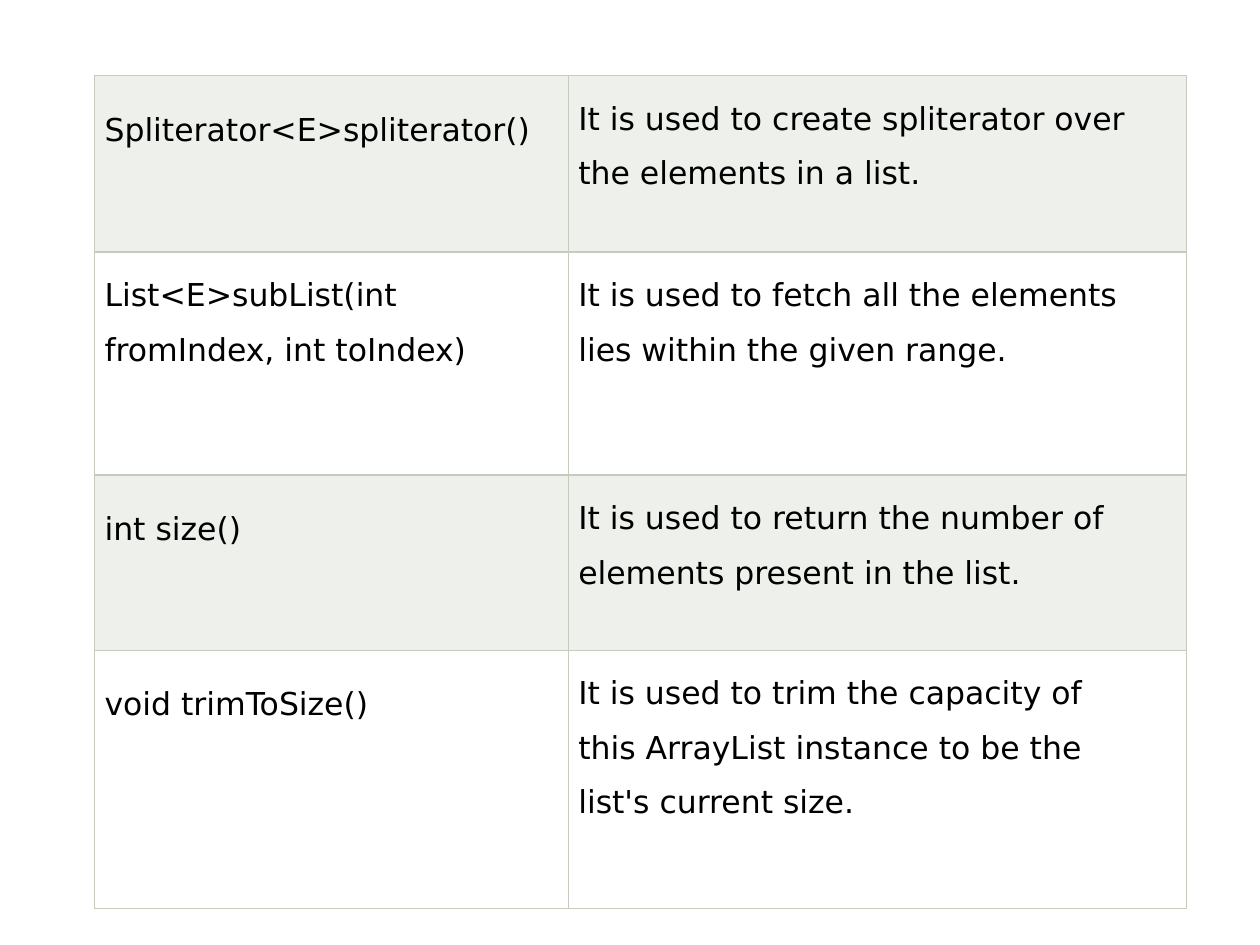
from lxml import etree
from pptx import Presentation
from pptx.dml.color import RGBColor
from pptx.enum.text import MSO_ANCHOR
from pptx.oxml.ns import qn
from pptx.util import Inches, Pt

FONT = "DejaVu Sans"
BLACK = RGBColor(0x00, 0x00, 0x00)
BAND = RGBColor(0xEE, 0xF0, 0xEB)
WHITE = RGBColor(0xFF, 0xFF, 0xFF)
BORDER = RGBColor(0xC6, 0xCC, 0xBD)

COLUMN_WIDTHS = (3.76, 4.91)
ONE_LINE = {"top": 0.29, "spacing": 1.0}
WRAPPED = {"top": 0.06, "spacing": 1.49}

# Row height, method, method layout, description
METHODS = (
    (1.4, "Spliterator<E>spliterator()", ONE_LINE,
     "It is used to create spliterator over the elements in a list."),
    (1.77, "List<E>subList(int fromIndex, int toIndex)", WRAPPED,
     "It is used to fetch all the elements lies within the given range."),
    (1.39, "int size()", ONE_LINE,
     "It is used to return the number of elements present in the list."),
    (2.05, "void trimToSize()", ONE_LINE,
     "It is used to trim the capacity of this ArrayList instance to be "
     "the list's current size."),
)


def set_borders(cell):
    properties = cell._tc.get_or_add_tcPr()
    # Border lines come before the fill in the cell properties
    for index, side in enumerate(("a:lnL", "a:lnR", "a:lnT", "a:lnB")):
        line = etree.Element(qn(side), w=str(Pt(0.75)))
        fill = etree.SubElement(line, qn("a:solidFill"))
        etree.SubElement(fill, qn("a:srgbClr"), val=str(BORDER))
        properties.insert(index, line)


def fill_cell(cell, text, color, top, spacing, right=0):
    cell.fill.solid()
    cell.fill.fore_color.rgb = color
    set_borders(cell)
    cell.vertical_anchor = MSO_ANCHOR.TOP
    cell.margin_left = Inches(0.08)
    cell.margin_right = Inches(right)
    cell.margin_top = Inches(top)
    cell.margin_bottom = 0

    cell.text_frame.text = text
    para = cell.text_frame.paragraphs[0]
    para.line_spacing = spacing
    font = para.runs[0].font
    font.name = FONT
    font.size = Pt(18)
    font.bold = False
    font.color.rgb = BLACK


def add_method_table(page):
    frame = page.shapes.add_table(
        len(METHODS), len(COLUMN_WIDTHS), Inches(0.75), Inches(0.6),
        Inches(sum(COLUMN_WIDTHS)), Inches(sum(row[0] for row in METHODS)))
    table = frame.table
    table.first_row = False
    table.horz_banding = False
    for column, width in zip(table.columns, COLUMN_WIDTHS):
        column.width = Inches(width)

    for index, (height, method, layout, description) in enumerate(METHODS):
        table.rows[index].height = Inches(height)
        color = WHITE if index % 2 else BAND
        fill_cell(table.cell(index, 0), method, color, **layout)
        fill_cell(table.cell(index, 1), description, color, right=0.4, **WRAPPED)


def main():
    deck = Presentation()
    deck.slide_width = Inches(10)
    deck.slide_height = Inches(7.5)
    page = deck.slides.add_slide(deck.slide_layouts[6])
    add_method_table(page)
    deck.save("out.pptx")


if __name__ == "__main__":
    main()
